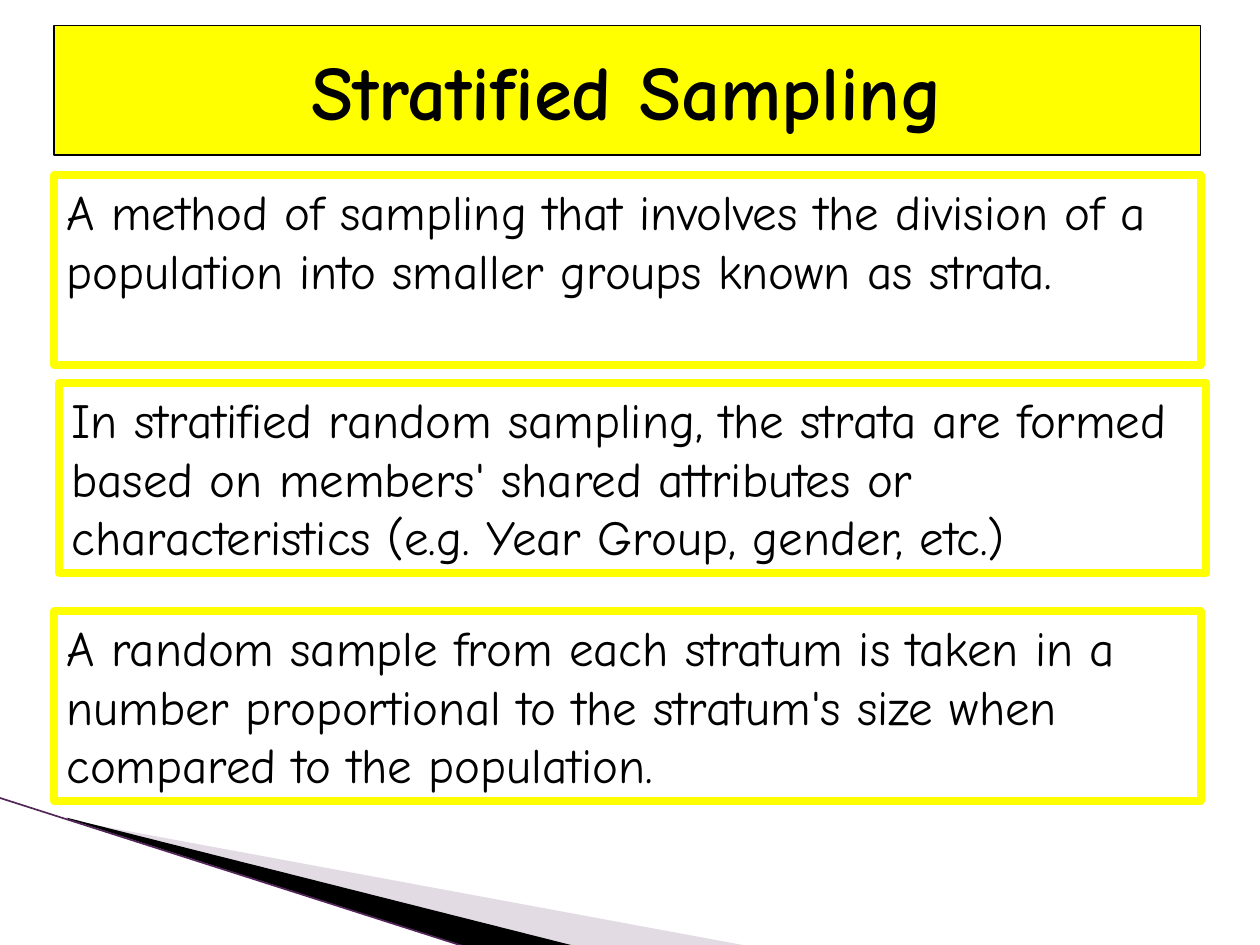
from lxml import etree
from pptx import Presentation
from pptx.dml.color import RGBColor
from pptx.enum.shapes import MSO_CONNECTOR, MSO_SHAPE
from pptx.enum.text import MSO_ANCHOR, MSO_AUTO_SIZE, PP_ALIGN
from pptx.oxml.ns import qn
from pptx.util import Inches, Pt

RECT = MSO_SHAPE.RECTANGLE
STRAIGHT = MSO_CONNECTOR.STRAIGHT
TOP, MIDDLE = MSO_ANCHOR.TOP, MSO_ANCHOR.MIDDLE
LEFT, CENTER = PP_ALIGN.LEFT, PP_ALIGN.CENTER
GROW = MSO_AUTO_SIZE.SHAPE_TO_FIT_TEXT

FONT = "Comic Neue"
YELLOW, BLACK = "FFFF00", "000000"
WIDE, HIGH = 10, 7.5
MARGIN, SPAN, TALL = 0.43, 9.1, 1.51

NOTES = [
    (MARGIN, 1.39, "A method of sampling that involves the division of a "
     "population into smaller groups known as strata."),
    (MARGIN + 0.04, 3.04, "In stratified random sampling, the strata are formed "
     "based on members' shared attributes or characteristics "
     "(e.g. Year Group, gender, etc.)"),
    (MARGIN, 4.85, "A random sample from each stratum is taken in a number "
     "proportional to the stratum's size when compared to the population."),
]
PALE = [(0.55, 6.51), (5.95, 7.51), (4.56, 7.51), (0.55, 6.5)]
DARK = [(0.53, 6.49), (4.57, 7.51), (3.72, 7.52), (0.54, 6.5)]


def color(code):
    """Turn a hex string into a colour."""
    return RGBColor.from_string(code)


def write(shape, text, size=28, bold=False, align=LEFT, anchor=TOP):
    """Put formatted text into a shape."""
    frame = shape.text_frame
    frame.word_wrap = True
    frame.vertical_anchor = anchor
    para = frame.paragraphs[0]
    para.alignment = align
    run = para.add_run()
    run.text = text
    font = run.font
    font.name, font.size, font.bold = FONT, Pt(size), bold
    font.color.rgb = color(BLACK)


def add_box(slide, left, top, high, line, width, fill=None):
    """Add a full-width framed box."""
    box = slide.shapes.add_shape(
        RECT, Inches(left), Inches(top), Inches(SPAN), Inches(high))
    box.shadow.inherit = False
    if fill:
        box.fill.solid()
        box.fill.fore_color.rgb = color(fill)
    else:
        box.fill.background()
    box.line.color.rgb = color(line)
    box.line.width = Pt(width)
    return box


def add_wedge(slide, points, fill, alpha=100):
    """Add a filled outline through the points, with alpha in percent."""
    start, *rest = [(Inches(x), Inches(y)) for x, y in points]
    pen = slide.shapes.build_freeform(*start)
    pen.add_line_segments(rest, close=True)
    wedge = pen.convert_to_shape()
    wedge.shadow.inherit = False
    wedge.fill.solid()
    wedge.fill.fore_color.rgb = color(fill)
    wedge.line.fill.background()
    if alpha < 100:
        tone = wedge.fill._xPr.find(qn("a:solidFill"))[0]
        etree.SubElement(tone, qn("a:alpha"), val=str(alpha * 1000))


def add_line(slide, start, end, tone, width):
    """Add a straight line without a shadow."""
    ends = [Inches(n) for n in (*start, *end)]
    line = slide.shapes.add_connector(STRAIGHT, *ends)
    line.line.color.rgb = color(tone)
    line.line.width = Pt(width)
    etree.SubElement(line._element.spPr, qn("a:effectLst"))


def main():
    """Build and save the slide."""
    deck = Presentation()
    deck.slide_width, deck.slide_height = Inches(WIDE), Inches(HIGH)
    slide = deck.slides.add_slide(deck.slide_layouts[6])
    add_wedge(slide, PALE, "B9A5BC", alpha=40)
    add_wedge(slide, DARK, BLACK)
    add_line(slide, (-0.01, 6.33), (3.71, 7.52), "53265A", 0.95)
    title = add_box(slide, MARGIN, 0.2, 1.03, BLACK, 0.75, fill=YELLOW)
    write(title, "Stratified Sampling", size=44, bold=True,
          align=CENTER, anchor=MIDDLE)
    for left, top, text in NOTES:
        box = add_box(slide, left, top, TALL, YELLOW, 4.5)
        write(box, text)
        box.text_frame.auto_size = GROW
    deck.save("out.pptx")


if __name__ == "__main__":
    main()
